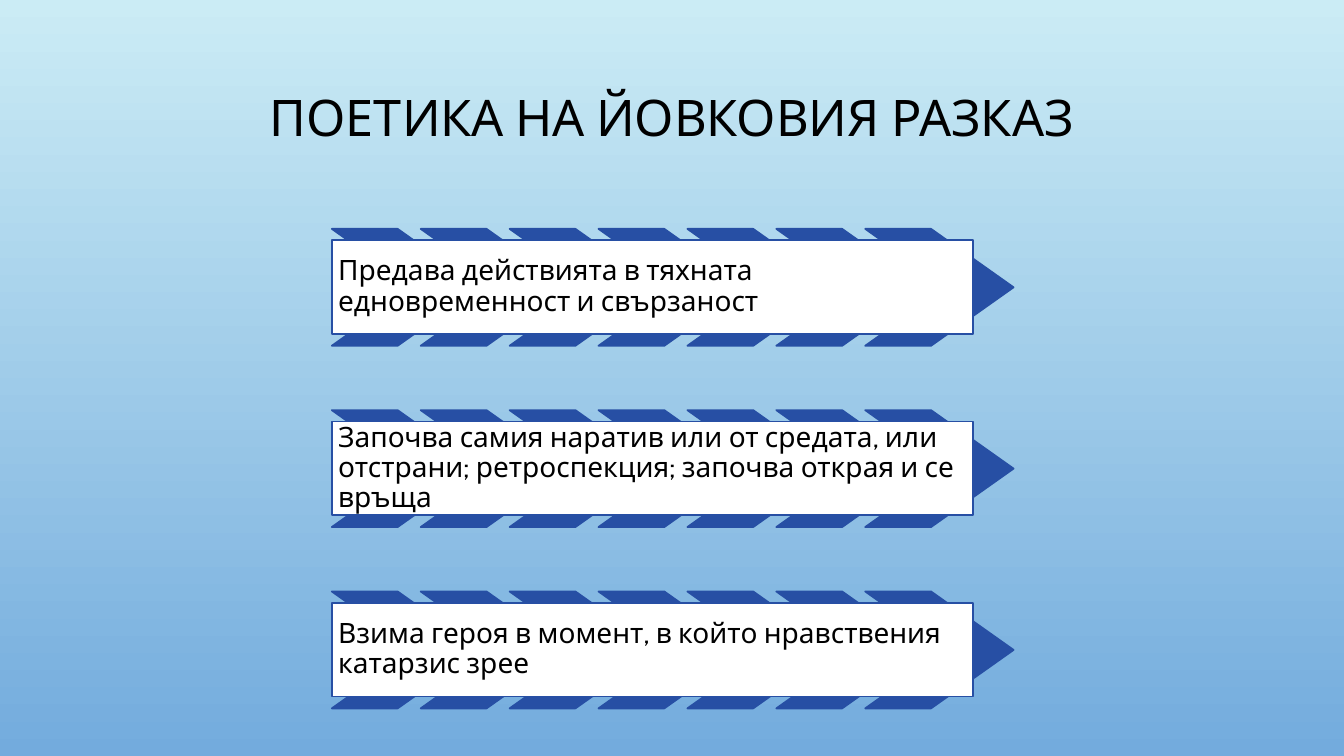
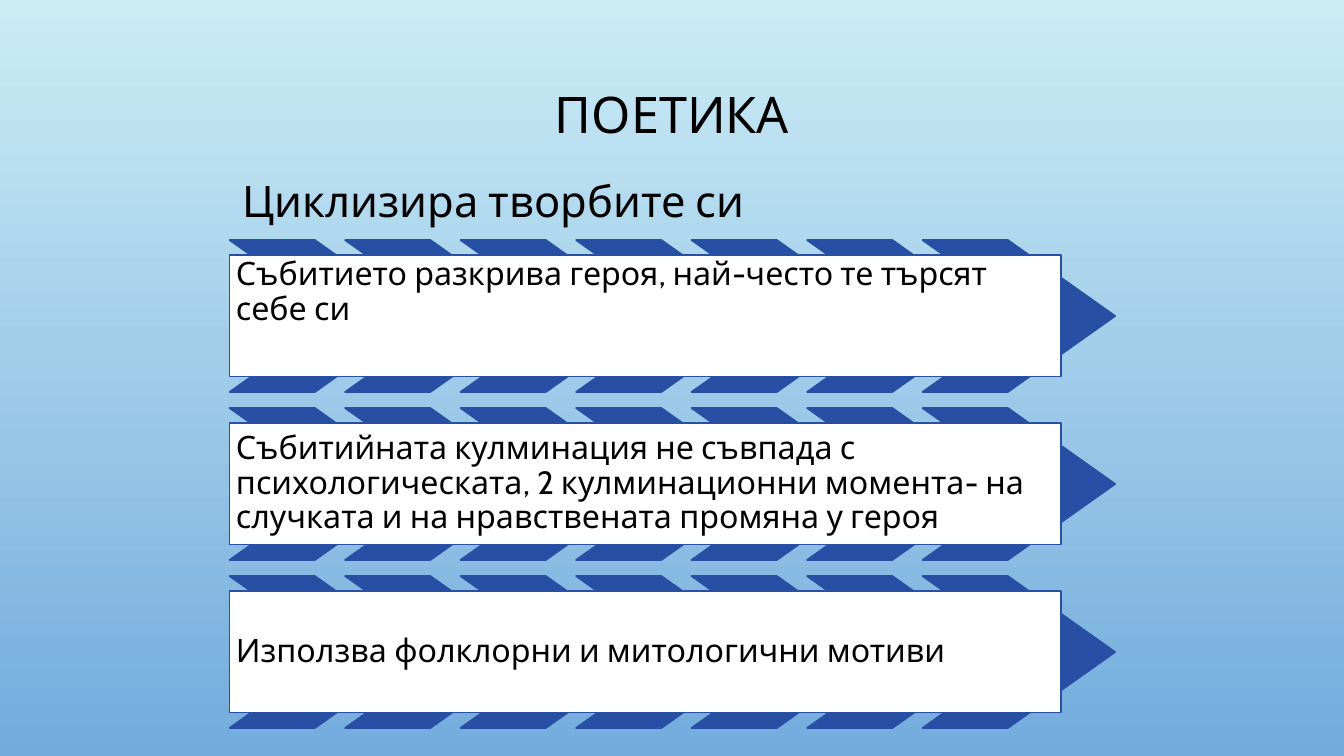
from dataclasses import dataclass

from pptx import Presentation
from pptx.dml.color import RGBColor
from pptx.enum.shapes import MSO_SHAPE
from pptx.enum.text import MSO_ANCHOR, PP_ALIGN
from pptx.util import Emu, Pt

PX = 6350  # EMU in one px, 144 px to the inch
BLANK_LAYOUT = 6


def px(length):
    return Emu(length * PX)


@dataclass(frozen=True)
class Theme:
    font: str = "Cabin"
    text: RGBColor = RGBColor(0x00, 0x00, 0x00)
    panel: RGBColor = RGBColor(0xFF, 0xFF, 0xFF)
    accent: RGBColor = RGBColor(0x27, 0x4F, 0xA4)
    sky_top: RGBColor = RGBColor(0xCB, 0xEC, 0xF5)
    sky_bottom: RGBColor = RGBColor(0x73, 0xAB, 0xDD)
    title_size: int = 36
    heading_size: int = 31
    outline: float = 1.25
    line_spacing: float = 0.9


@dataclass(frozen=True)
class ArrowList:
    """Measures of a column of chevron arrows with text panels, in px."""
    left: int
    top: int
    row_step: int
    chevron_width: int
    chevron_height: int
    chevron_step: int
    panel_width: int
    panel_height: int
    text_size: int
    chevrons: int = 7
    notch: float = 0.706
    inset: int = 9


class Deck:
    def __init__(self, theme):
        self.theme = theme
        self.deck = Presentation()
        self.deck.slide_width, self.deck.slide_height = px(1920), px(1080)
        self.page = None

    def add_page(self):
        self.page = self.deck.slides.add_slide(self.deck.slide_layouts[BLANK_LAYOUT])
        fill = self.page.background.fill
        fill.gradient()
        fill.gradient_angle = 270
        for stop, color in zip(fill.gradient_stops, (self.theme.sky_top, self.theme.sky_bottom)):
            stop.color.rgb = color

    def set_text(self, box, text, size, anchor, insets, align=PP_ALIGN.LEFT):
        """Set one paragraph; insets are horizontal and vertical px."""
        frame = box.text_frame
        frame.word_wrap = True
        frame.vertical_anchor = anchor
        frame.margin_left = frame.margin_right = px(insets[0])
        frame.margin_top = frame.margin_bottom = px(insets[1])
        para = frame.paragraphs[0]
        para.text = text
        para.alignment = align
        para.line_spacing = self.theme.line_spacing
        para.font.name = self.theme.font
        para.font.size = Pt(size)
        para.font.color.rgb = self.theme.text

    def add_title(self, text, height):
        box = self.page.shapes.add_textbox(px(144), px(98), px(1632), px(height))
        self.set_text(box, text, self.theme.title_size, MSO_ANCHOR.MIDDLE, (14, 7),
                      PP_ALIGN.CENTER)

    def add_heading(self, text, left, top, width, height):
        box = self.page.shapes.add_textbox(px(left), px(top), px(width), px(height))
        self.set_text(box, text, self.theme.heading_size, MSO_ANCHOR.BOTTOM, (19, 19))

    def add_shape(self, kind, left, top, width, height, color):
        shape = self.page.shapes.add_shape(kind, px(left), px(top), px(width), px(height))
        shape.shadow.inherit = False
        shape.fill.solid()
        shape.fill.fore_color.rgb = color
        shape.line.color.rgb = self.theme.accent
        shape.line.width = Pt(self.theme.outline)
        return shape

    def add_arrow_row(self, style, top, text, anchor, top_inset):
        # Chevrons behind the panel
        for index in range(style.chevrons):
            chevron = self.add_shape(
                MSO_SHAPE.CHEVRON, style.left + index * style.chevron_step, top,
                style.chevron_width, style.chevron_height, self.theme.accent)
            chevron.adjustments[0] = style.notch
        # Text panel, centred on the chevrons
        panel_top = top + (style.chevron_height - style.panel_height) // 2
        panel = self.add_shape(MSO_SHAPE.RECTANGLE, style.left, panel_top,
                               style.panel_width, style.panel_height, self.theme.panel)
        self.set_text(panel, text, style.text_size, anchor, (style.inset, top_inset))

    def add_arrow_list(self, style, texts, raised=()):
        """Stack one row per text; rows listed in raised start at the panel top."""
        for row, text in enumerate(texts):
            anchor, inset = ((MSO_ANCHOR.TOP, 4) if row in raised
                             else (MSO_ANCHOR.MIDDLE, style.inset))
            self.add_arrow_row(style, style.top + row * style.row_step, text, anchor, inset)


def main():
    show = Deck(Theme())

    # Poetics of the story
    show.add_page()
    show.add_title("ПОЕТИКА НА ЙОВКОВИЯ РАЗКАЗ", 147)
    show.add_arrow_list(
        ArrowList(left=474, top=327, row_step=259, chevron_width=212, chevron_height=167,
                  chevron_step=127, panel_width=916, panel_height=134, text_size=20),
        ["Предава действията в тяхната едновременност и свързаност",
         "Започва самия наратив или от средата, или отстрани; ретроспекция; "
         "започва открая и се връща",
         "Взима героя в момент, в който нравствения катарзис зрее"])

    # Poetics: cycles of works
    show.add_page()
    show.add_title("ПОЕТИКА", 138)
    show.add_heading("Циклизира творбите си", 328, 236, 1174, 107)
    show.add_arrow_list(
        ArrowList(left=328, top=343, row_step=240, chevron_width=275, chevron_height=217,
                  chevron_step=165, panel_width=1188, panel_height=174, text_size=23),
        ["Събитието разкрива героя, най-често те търсят себе си",
         "Събитийната кулминация не съвпада с психологическата, 2 кулминационни "
         "момента- на случката и на нравствената промяна у героя",
         "Използва фолклорни и митологични мотиви"],
        raised=(0,))

    show.deck.save("out.pptx")


if __name__ == "__main__":
    main()
